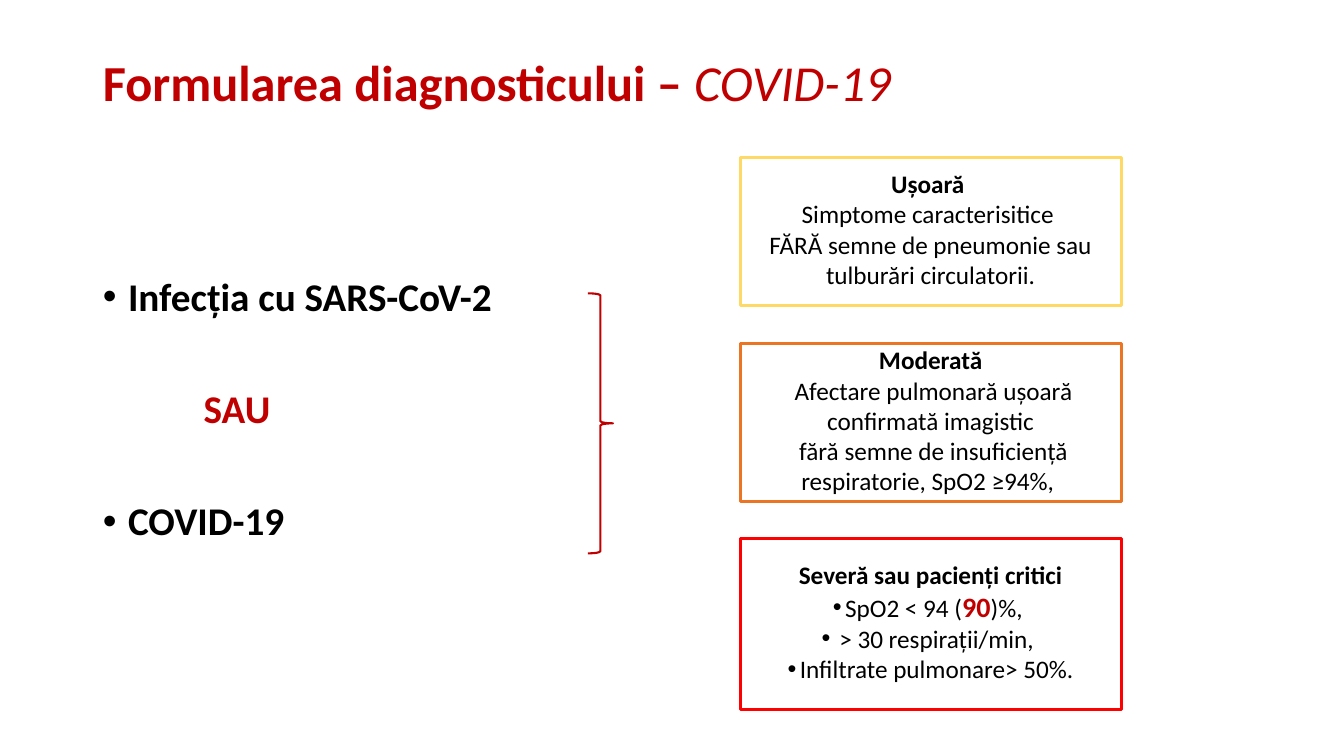
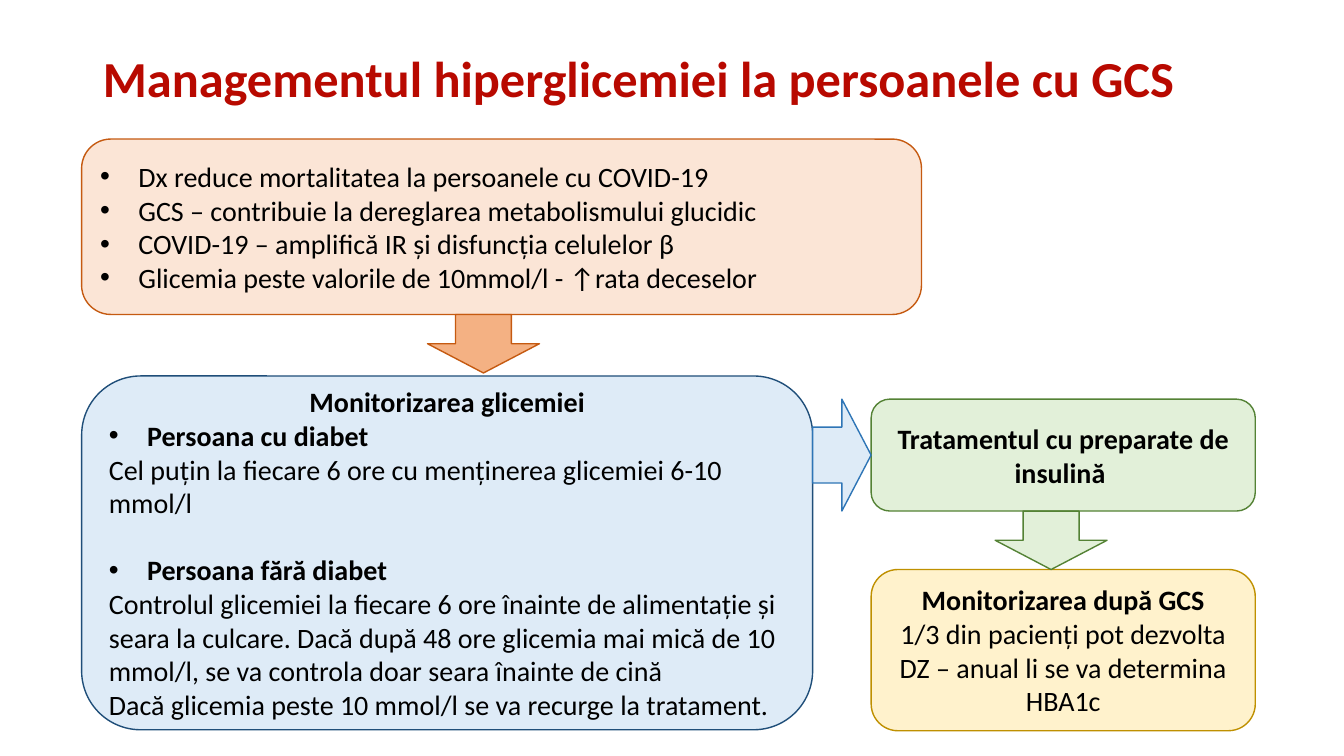
from dataclasses import dataclass

from lxml import etree
from pptx import Presentation
from pptx.dml.color import RGBColor
from pptx.enum.shapes import MSO_SHAPE
from pptx.enum.text import MSO_ANCHOR, MSO_AUTO_SIZE, PP_ALIGN
from pptx.oxml.ns import qn
from pptx.util import Inches, Pt

LEFT, CENTER = PP_ALIGN.LEFT, PP_ALIGN.CENTER
TOP, MIDDLE = MSO_ANCHOR.TOP, MSO_ANCHOR.MIDDLE
RECTANGLE, ROUNDED = MSO_SHAPE.RECTANGLE, MSO_SHAPE.ROUNDED_RECTANGLE
RIGHT_BRACE = MSO_SHAPE.RIGHT_BRACE
DOWN_ARROW, RIGHT_ARROW = MSO_SHAPE.DOWN_ARROW, MSO_SHAPE.RIGHT_ARROW
TITLE_AND_BODY, TITLE_ONLY = 1, 5


@dataclass(frozen=True)
class Theme:
    font: str = "Calibri"
    # Type sizes and line widths in points
    title_size: int = 36
    body_size: int = 28
    flow_size: int = 20
    card_size: int = 18
    thin: float = 1
    medium: float = 1.5
    thick: float = 2.25
    # Colours
    text: str = "000000"
    accent: str = "C00000"
    title_red: str = "B80900"
    mild: str = "FFD966"
    moderate: str = "EC7524"
    severe: str = "FF0000"
    # Fill and line pairs
    orange: tuple = ("FBE5D6", "C55A11")
    orange_arrow: tuple = ("F4B183", "C55A11")
    blue: tuple = ("DEEBF7", "1F4E79")
    blue_arrow: tuple = ("DEEBF7", "2E75B6")
    green: tuple = ("E2F0D9", "548235")
    yellow: tuple = ("FFF2CC", "BF9000")


THEME = Theme()


@dataclass(frozen=True)
class Box:
    """A region in inches."""
    left: float
    top: float
    width: float
    height: float

    @property
    def right(self):
        return self.left + self.width

    @property
    def bottom(self):
        return self.top + self.height

    def inner(self, left, top, width, height):
        return Box(self.left + left, self.top + top, width, height)

    def emu(self):
        return [Inches(n) for n in (self.left, self.top, self.width, self.height)]


def rgb(value):
    return RGBColor.from_string(value)


def add_text(para, text, size, color=THEME.text, bold=False, italic=False):
    span = para.add_run()
    span.text = text
    font = span.font
    font.name, font.size = THEME.font, Pt(size)
    font.bold, font.italic = bold, italic
    font.color.rgb = rgb(color)


def write_para(para, spans, size, align=LEFT, bullet=False, hang=0.38,
               margin=0, before=0, line=1.0, **style):
    """Spans are a string or (text, overrides) pairs."""
    para.alignment = align
    para.line_spacing = line
    para.space_before, para.space_after = Pt(before), Pt(0)
    props = para._p.get_or_add_pPr()
    props.set("marL", str(Inches(hang if bullet else margin)))
    props.set("indent", str(Inches(-hang if bullet else 0)))
    if bullet:
        face = etree.SubElement(props, qn("a:buFont"))
        face.set("typeface", "Arial")
        etree.SubElement(props, qn("a:buChar")).set("char", "•")
    else:
        etree.SubElement(props, qn("a:buNone"))
    for text, changes in [(spans, {})] if isinstance(spans, str) else spans:
        add_text(para, text, **{"size": size, **style, **changes})


def fill_frame(frame, items, anchor=MIDDLE, **common):
    """Items are (spans, format) pairs, one for each paragraph."""
    frame.word_wrap = True
    frame.auto_size = MSO_AUTO_SIZE.NONE
    frame.vertical_anchor = anchor
    for index, (spans, changes) in enumerate(items):
        para = frame.add_paragraph() if index else frame.paragraphs[0]
        write_para(para, spans, **{**common, **changes})


def place(shape, box):
    shape.left, shape.top, shape.width, shape.height = box.emu()


def add_shape(page, kind, box, line, fill=None, weight=THEME.thin):
    shape = page.shapes.add_shape(kind, *box.emu())
    shape.shadow.inherit = False
    if fill:
        shape.fill.solid()
        shape.fill.fore_color.rgb = rgb(fill)
    else:
        shape.fill.background()
    shape.line.color.rgb = rgb(line)
    shape.line.width = Pt(weight)
    return shape


def add_page(deck, layout, title_height, spans, color):
    page = deck.slides.add_slide(deck.slide_layouts[layout])
    title = page.shapes.title
    place(title, Box(0.92, 0.4, 11.5, title_height))
    fill_frame(title.text_frame, [(spans, {})], size=THEME.title_size,
               color=color, bold=True, line=0.9)
    return page


# Diagnosis slide
def diagnosis_names(page, box):
    body = page.placeholders[1]
    place(body, box)
    fill_frame(body.text_frame, [
        ("Infecția cu SARS-CoV-2", {"bullet": True}),
        ("SAU", {"margin": 1, "color": THEME.accent, "before": 50}),
        ("COVID-19", {"bullet": True, "before": 50}),
    ], anchor=TOP, size=THEME.body_size, bold=True, hang=0.25, line=0.9)


def severity_cards(page, box):
    bullet = {"bullet": True, "hang": 0.12}
    ninety = {"size": 20, "color": THEME.accent, "bold": True}
    cards = [
        (0, 1.47, THEME.mild, "Ușoară ", [
            ("Simptome caracterisitice ", {}),
            ("FĂRĂ semne de pneumonie sau tulburări circulatorii.", {})]),
        (1.85, 1.57, THEME.moderate, "Moderată", [
            (" Afectare pulmonară ușoară confirmată imagistic", {}),
            (" fără semne de insuficiență respiratorie, SpO2 ≥94%, ", {})]),
        (3.78, 1.7, THEME.severe, "Severă sau pacienți critici", [
            ([("SpO2 < 94 (", {}), ("90", ninety), (")%, ", {})], bullet),
            (" > 30 respirații/min, ", bullet),
            ("Infiltrate pulmonare> 50%.", bullet)]),
    ]
    for top, height, color, heading, lines in cards:
        card = add_shape(page, RECTANGLE, box.inner(0, top, box.width, height),
                         color, weight=THEME.thick)
        card.text_frame.margin_top = 0
        fill_frame(card.text_frame, [(heading, {"bold": True})] + lines,
                   size=THEME.card_size, align=CENTER)


def diagnosis_page(deck):
    page = add_page(deck, TITLE_AND_BODY, 0.89, [
        ("Formularea diagnosticului – ", {}),
        ("COVID-19", {"bold": False, "italic": True}),
    ], THEME.accent)
    diagnosis_names(page, Box(0.92, 2.7, 4.46, 2.98))
    add_shape(page, RIGHT_BRACE, Box(5.83, 2.91, 0.25, 2.58), THEME.accent,
              weight=THEME.medium)
    severity_cards(page, Box(7.34, 1.56, 3.78, 5.48))


# Management slide
def flow_box(page, box, colors, items, **common):
    fill, line = colors
    shape = add_shape(page, ROUNDED, box, line, fill)
    fill_frame(shape.text_frame, items, size=THEME.flow_size, **common)


def flow_arrow(page, kind, left, top, colors):
    fill, line = colors
    across, along = 1.11, 0.58
    size = (across, along) if kind == DOWN_ARROW else (along, across)
    add_shape(page, kind, Box(left, top, *size), line, fill)


def management_flow(page, box):
    evidence = box.inner(0, 0, 8.33, 1.74)
    glucose = box.inner(0, 2.35, 7.25, 3.51)
    insulin = box.inner(7.83, 2.58, 3.81, 1.11)
    follow_up = box.inner(7.83, 4.27, 3.81, 1.6)
    bold, point = {"bold": True}, {"bullet": True}
    heading = {"bold": True, "align": CENTER}

    # Boxes
    flow_box(page, evidence, THEME.orange, [
        ("Dx reduce mortalitatea la persoanele cu COVID-19", point),
        ("GCS – contribuie la dereglarea metabolismului glucidic", point),
        ("COVID-19 – amplifică IR și disfuncția celulelor β", point),
        ("Glicemia peste valorile de 10mmol/l - ↑rata deceselor", point),
    ])
    flow_box(page, glucose, THEME.blue, [
        ("Monitorizarea glicemiei", heading),
        ("Persoana cu diabet", {**bold, **point}),
        ("Cel puțin la fiecare 6 ore cu menținerea glicemiei 6-10 mmol/l", {}),
        ("Persoana fără diabet", {**bold, **point, "before": 24}),
        ("Controlul glicemiei la fiecare 6 ore înainte de alimentație și "
         "seara la culcare. Dacă după 48 ore glicemia mai mică de 10 mmol/l, "
         "se va controla doar seara înainte de cină", {}),
        ("Dacă glicemia peste 10 mmol/l se va recurge la tratament.", {}),
    ])
    flow_box(page, insulin, THEME.green, [
        ("Tratamentul cu preparate de insulină ", bold)], align=CENTER)
    flow_box(page, follow_up, THEME.yellow, [
        ("Monitorizarea după GCS", bold),
        ("1/3 din pacienți pot dezvolta DZ – anual li se va determina HBA1c", {}),
    ], align=CENTER)

    # Arrows
    flow_arrow(page, DOWN_ARROW, evidence.left + 3.43, evidence.bottom,
               THEME.orange_arrow)
    flow_arrow(page, RIGHT_ARROW, glucose.right, insulin.top, THEME.blue_arrow)
    flow_arrow(page, DOWN_ARROW, insulin.left + 1.23, insulin.bottom, THEME.green)


def management_page(deck):
    page = add_page(deck, TITLE_ONLY, 0.81,
                    "Managementul hiperglicemiei la persoanele cu GCS",
                    THEME.title_red)
    management_flow(page, Box(0.81, 1.38, 11.64, 5.87))


def main():
    deck = Presentation()
    deck.slide_width, deck.slide_height = Inches(13.33), Inches(7.5)
    diagnosis_page(deck)
    management_page(deck)
    deck.save("out.pptx")


if __name__ == "__main__":
    main()
